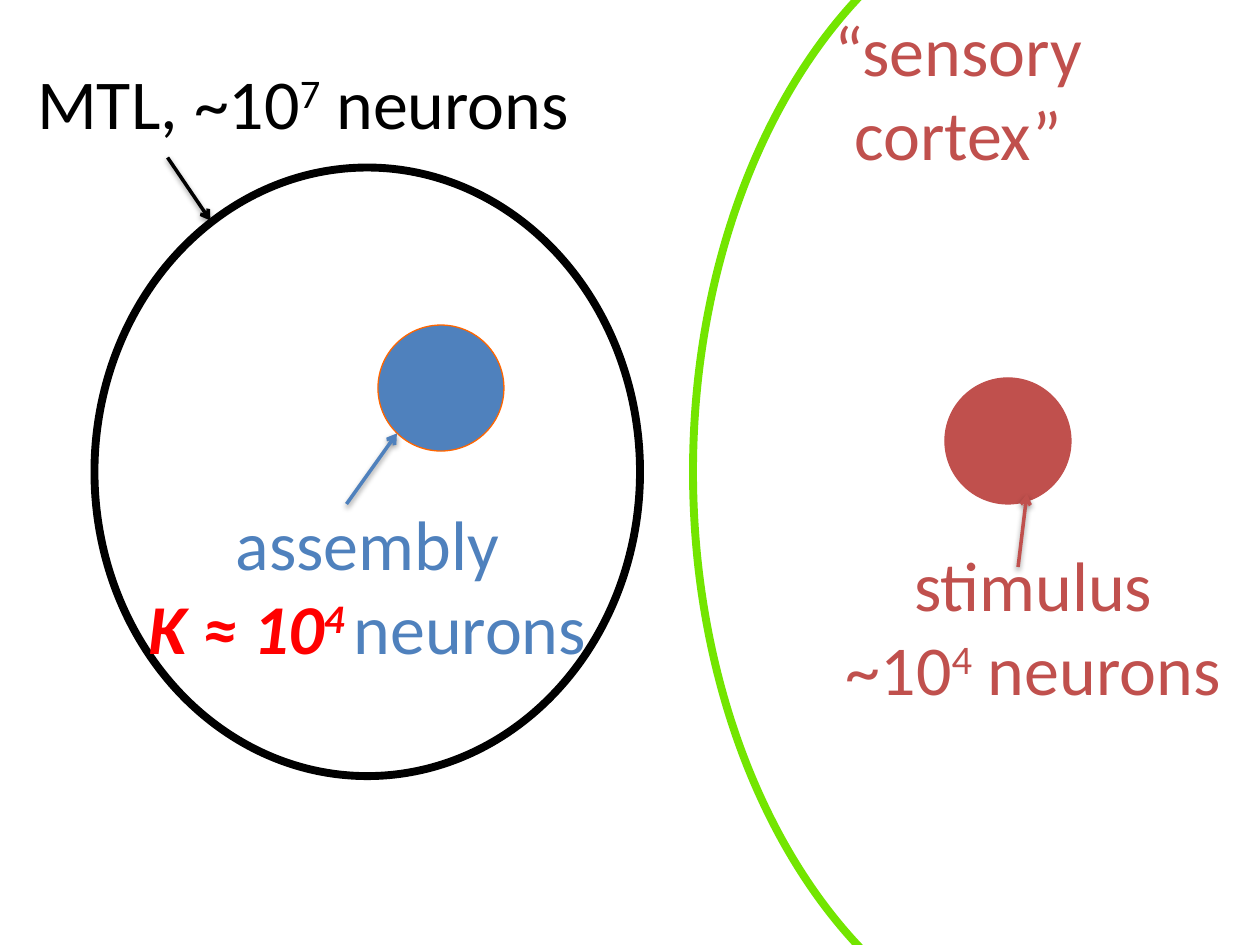
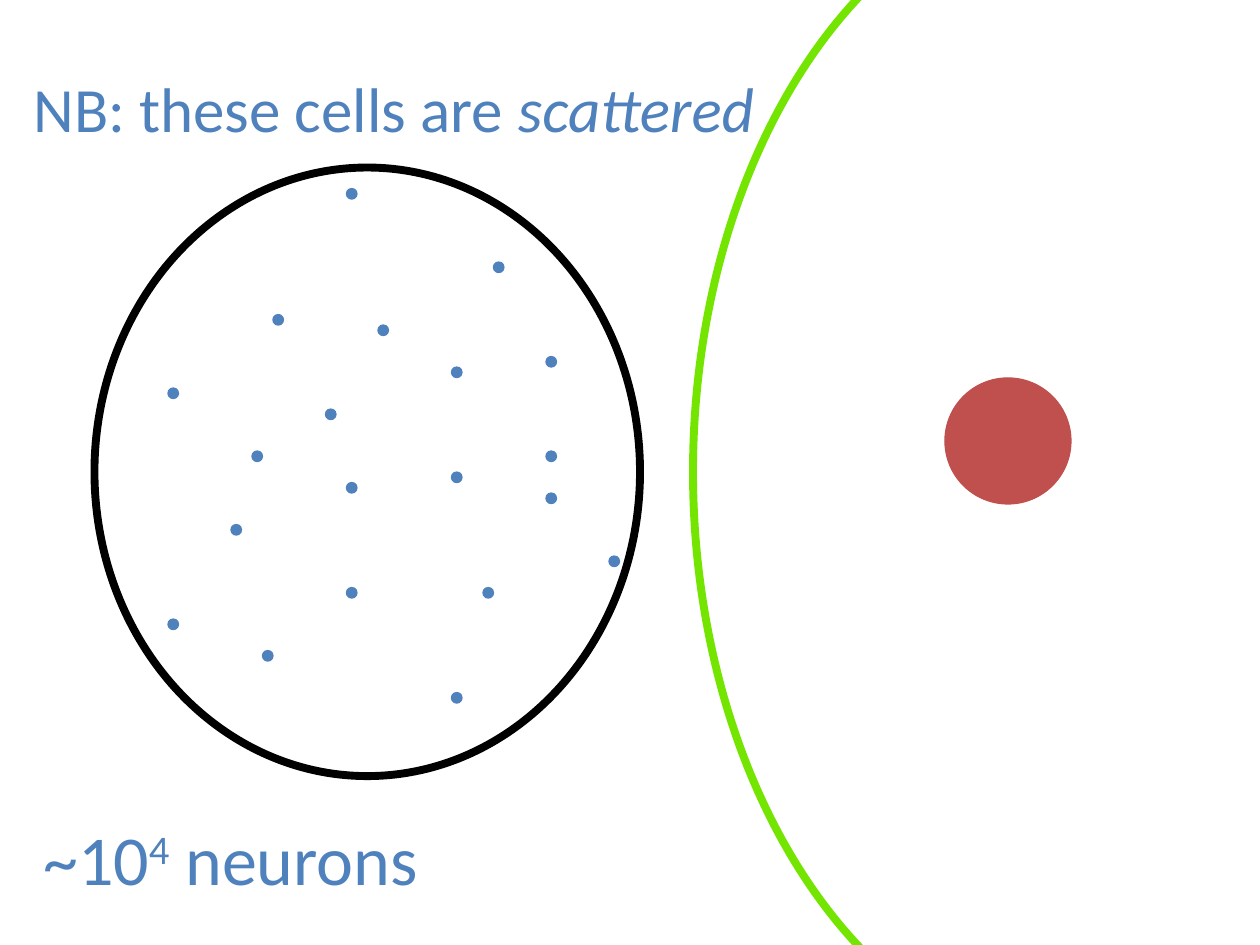
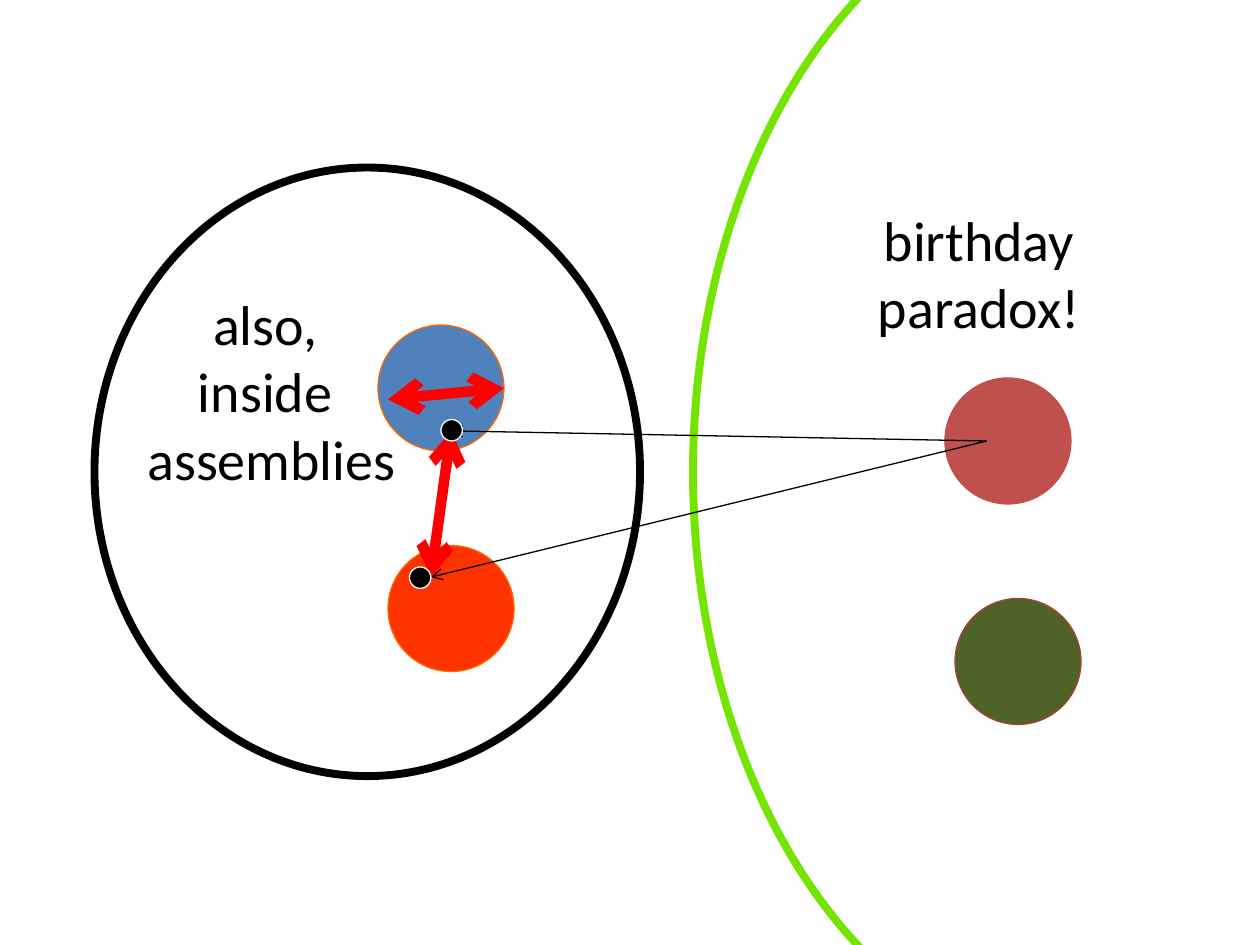
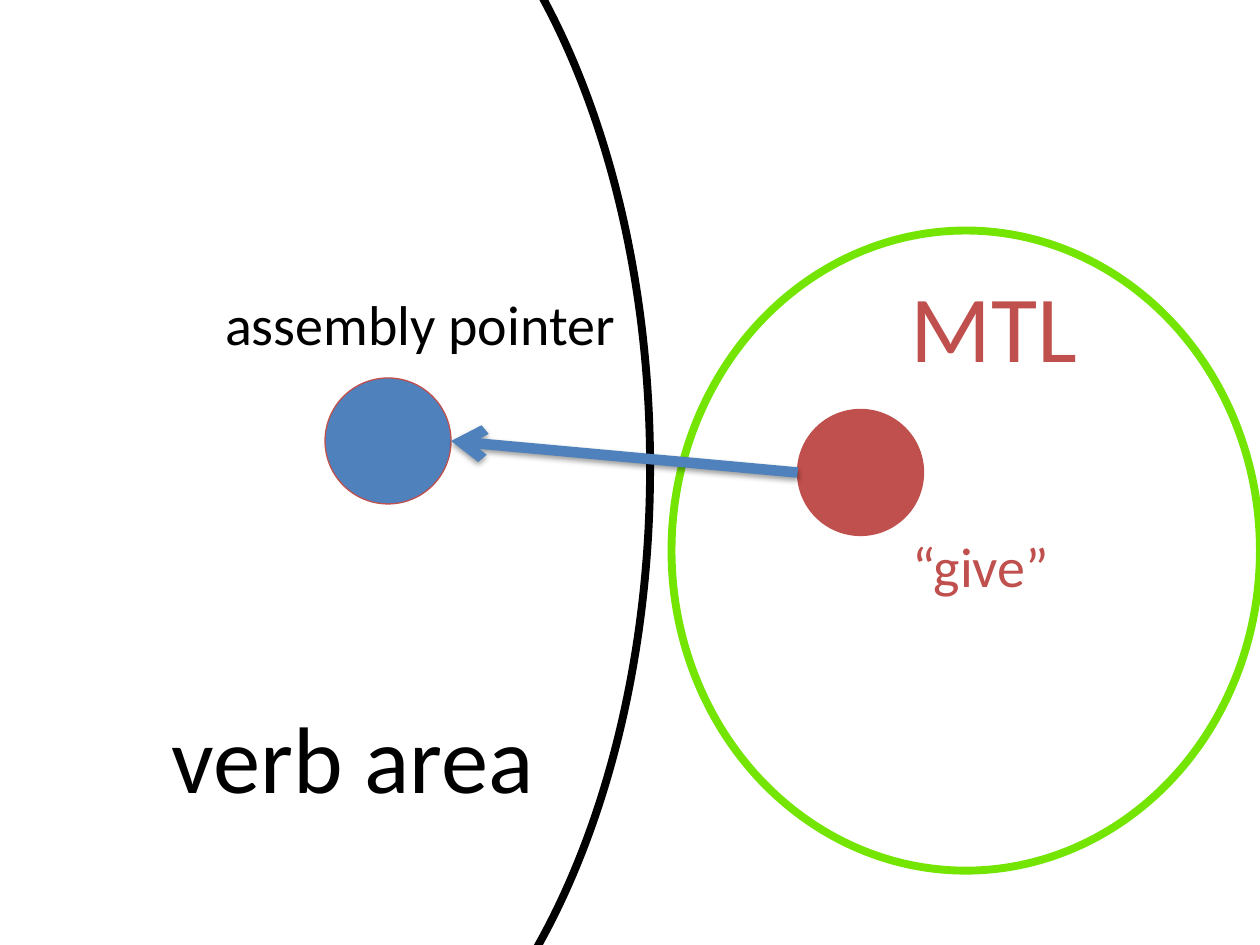
from collections import namedtuple

from lxml.etree import SubElement
from pptx import Presentation
from pptx.dml.color import RGBColor
from pptx.enum.shapes import MSO_CONNECTOR, MSO_SHAPE
from pptx.enum.text import MSO_AUTO_SIZE, PP_ALIGN
from pptx.oxml.ns import qn
from pptx.util import Inches, Pt

# Colours and font
BLACK = RGBColor(0x00, 0x00, 0x00)
WHITE = RGBColor(0xFF, 0xFF, 0xFF)
RED = RGBColor(0xFF, 0x00, 0x00)
BLUE = RGBColor(0x4F, 0x81, 0xBD)
BRICK = RGBColor(0xC0, 0x50, 0x4D)
DARK_BRICK = RGBColor(0xA9, 0x3F, 0x3C)
GREEN = RGBColor(0x73, 0xE5, 0x00)
OLIVE = RGBColor(0x4F, 0x62, 0x28)
ORANGE = RGBColor(0xFF, 0x66, 0x00)
VERMILION = RGBColor(0xFF, 0x33, 0x00)
FONT = "Calibri"

Box = namedtuple("Box", "left top width height")
MTL_BOX = Box(0.75, 1.33, 4.33, 4.83)
SENSORY_BOX = Box(5.5, -0.92, 6.42, 9.33)
VERB_BOX = Box(-1.17, -1.75, 6.33, 10.92)
VERB_MTL_BOX = Box(5.33, 1.83, 4.67, 5.08)

# Scattered cells, counted in cell widths from the corner of the MTL box
CELL = 1 / 12
CELLS = [
    (27, 15), (38, 9), (22, 23), (24, 40), (17, 14), (13, 34), (34, 50),
    (16, 46), (37, 40), (34, 19), (43, 27), (49, 37), (24, 30), (24, 2),
    (34, 29), (7, 21), (43, 18), (15, 27), (7, 43), (43, 31),
]


# Drawing helpers: x and y are measured from the corner of the box
def add_ellipse(slide, box, line_color, fill=None, line_width=0.75):
    shape = slide.shapes.add_shape(MSO_SHAPE.OVAL, *map(Inches, box))
    shape.shadow.inherit = False
    if fill is None:
        shape.fill.background()
    else:
        shape.fill.solid()
        shape.fill.fore_color.rgb = fill
    shape.line.color.rgb = line_color
    shape.line.width = Pt(line_width)


def add_area(slide, box, color):
    add_ellipse(slide, box, color, line_width=4.5)


def add_disc(slide, box, x, y, fill, line_color, size=1):
    disc_box = Box(box.left + x, box.top + y, size, size)
    add_ellipse(slide, disc_box, line_color, fill)


def add_label(slide, box, x, y, width, height, lines, size, color, wrap=False):
    """Each line is a list of runs: a text, or a text with its style."""
    shape = slide.shapes.add_textbox(
        Inches(box.left + x), Inches(box.top + y), Inches(width), Inches(height))
    frame = shape.text_frame
    frame.word_wrap = wrap
    frame.auto_size = MSO_AUTO_SIZE.SHAPE_TO_FIT_TEXT
    for index, runs in enumerate(lines):
        paragraph = frame.add_paragraph() if index else frame.paragraphs[0]
        paragraph.alignment = PP_ALIGN.CENTER
        for item in runs:
            text, style = (item, {}) if isinstance(item, str) else item
            run = paragraph.add_run()
            run.text = text
            font = run.font
            font.name, font.size = FONT, Pt(size)
            font.color.rgb = style.get("color", color)
            font.bold = style.get("bold")
            font.italic = style.get("italic")
            if style.get("superscript"):
                run._r.get_or_add_rPr().set("baseline", "30000")


def add_arrow(slide, box, start, end, color, width, double=False, shadow=False):
    points = [Inches(corner + offset) for point in (start, end)
              for corner, offset in zip((box.left, box.top), point)]
    connector = slide.shapes.add_connector(MSO_CONNECTOR.STRAIGHT, *points)
    connector.line.color.rgb = color
    connector.line.width = Pt(width)
    properties = connector._element.spPr
    line = properties.find(qn("a:ln"))
    for end_tag in ("a:headEnd", "a:tailEnd") if double else ("a:tailEnd",):
        SubElement(line, qn(end_tag), type="arrow")
    effects = SubElement(properties, qn("a:effectLst"))
    if shadow:
        outer = SubElement(effects, qn("a:outerShdw"), blurRad="40000",
                           dist="20000", dir="5400000", rotWithShape="0")
        tint = SubElement(outer, qn("a:srgbClr"), val=str(BLACK))
        SubElement(tint, qn("a:alpha"), val="38000")


SUPER_4 = ("4", {"superscript": True})
NEURON_COUNT = ["~10", SUPER_4, " neurons"]


# Regions shared by the slides
def add_sensory_cortex(slide, box):
    add_disc(slide, box, 2, 3.92, BRICK, BRICK)
    add_area(slide, box, GREEN)


def add_mtl_assembly(slide, box):
    add_area(slide, box, BLACK)
    add_disc(slide, box, 2.25, 1.25, BLUE, ORANGE)


# Slide 1: an assembly and its stimulus
def add_mtl_labels(slide, box):
    add_label(slide, box, -0.66, -0.91, 4.63, 0.77,
              [["MTL, ~10", ("7", {"superscript": True}), " neurons"]], 40, BLACK)
    emphasis = {"color": RED, "bold": True, "italic": True}
    add_label(slide, box, 0.25, 2.59, 3.83, 1.45,
              [["assembly"],
               [("K ≈ 10", emphasis), ("4 ", {**emphasis, "superscript": True}),
                "neurons"]], 40, BLUE)
    add_arrow(slide, box, (0.58, -0.08), (0.92, 0.42), BLACK, 2, shadow=True)
    add_arrow(slide, box, (2, 2.67), (2.4, 2.11), BLUE, 2, shadow=True)


def add_stimulus_labels(slide, box):
    add_label(slide, box, 1.01, 0.92, 2.19, 1.45,
              [["“sensory"], ["cortex”"]], 40, BRICK)
    add_label(slide, box, 1.08, 5.17, 3.24, 1.45,
              [["stimulus"], NEURON_COUNT], 40, BRICK)
    add_arrow(slide, box, (2.58, 5.42), (2.65, 4.84), BRICK, 2, shadow=True)


def build_assembly_slide(slide):
    add_sensory_cortex(slide, SENSORY_BOX)
    add_mtl_assembly(slide, MTL_BOX)
    add_mtl_labels(slide, MTL_BOX)
    add_stimulus_labels(slide, SENSORY_BOX)


# Slide 2: the cells of the assembly are scattered
def add_scattered_cells(slide, box):
    add_area(slide, box, BLACK)
    for column, row in CELLS:
        add_disc(slide, box, column * CELL, row * CELL, BLUE, BLUE, CELL)
    add_label(slide, box, -0.67, -0.83, 6.09, 0.71,
              [["NB: these cells are ", ("scattered", {"italic": True})]], 36, BLUE)
    add_label(slide, box, -0.54, 5.09, 3.24, 0.77, [NEURON_COUNT], 40, BLUE)


def build_scattered_slide(slide):
    add_sensory_cortex(slide, SENSORY_BOX)
    add_scattered_cells(slide, MTL_BOX)


# Slide 3: links between and inside assemblies
def add_second_stimulus(slide, box):
    add_disc(slide, box, 2.08, 5.67, OLIVE, DARK_BRICK)
    add_label(slide, box, 1.36, 2.5, 1.82, 1.18,
              [["birthday"], ["paradox!"]], 32, BLACK)


def add_assembly_links(slide, box):
    stimulus, upper, lower = (7.08, 2.17), (2.83, 2.09), (2.67, 3.25)
    add_disc(slide, box, 2.33, 3, VERMILION, ORANGE)
    for target in (upper, lower):
        add_arrow(slide, box, stimulus, target, BLACK, 0.75)
    add_arrow(slide, box, upper, lower, RED, 6, double=True)
    add_label(slide, box, 0.31, 0.92, 2.19, 1.72,
              [["also, "], ["inside "], ["assemblies"]], 32, BLACK)
    add_arrow(slide, box, (2.33, 1.84), (3.25, 1.75), RED, 6, double=True)
    for x, y in ((2.75, 2), (2.5, 3.17)):
        add_disc(slide, box, x, y, BLACK, WHITE, 0.17)


def build_links_slide(slide):
    add_sensory_cortex(slide, SENSORY_BOX)
    add_mtl_assembly(slide, MTL_BOX)
    add_second_stimulus(slide, SENSORY_BOX)
    add_assembly_links(slide, MTL_BOX)


# Slide 4: a pointer from MTL to the verb area
def add_verb_area(slide, box):
    add_area(slide, box, BLACK)
    add_disc(slide, box, 3.75, 4.75, BLUE, BRICK)
    add_label(slide, box, 2.41, 7.25, 3.12, 1.01, [["verb area"]], 54, BLACK)
    add_label(slide, box, 2.84, 4, 3.33, 0.64, [["assembly pointer"]], 32, BLACK)


def add_verb_source(slide, box):
    add_area(slide, box, GREEN)
    add_label(slide, box, 1.79, 0.25, 1.54, 1.01, [["MTL"]], 54, BRICK)
    add_label(slide, box, 1.34, 2.34, 2.23, 0.64, [["“give”"]], 32, BRICK, wrap=True)
    add_disc(slide, box, 1, 1.42, BRICK, BRICK)
    add_arrow(slide, box, (1, 1.92), (-1.75, 1.67), BLUE, 6, shadow=True)


def build_pointer_slide(slide):
    add_verb_area(slide, VERB_BOX)
    add_verb_source(slide, VERB_MTL_BOX)


def main():
    presentation = Presentation()
    presentation.slide_width, presentation.slide_height = Inches(10), Inches(7.5)
    blank_layout = presentation.slide_layouts.get_by_name("Blank")
    for build in (build_assembly_slide, build_scattered_slide,
                  build_links_slide, build_pointer_slide):
        build(presentation.slides.add_slide(blank_layout))
    presentation.save("out.pptx")


if __name__ == "__main__":
    main()
